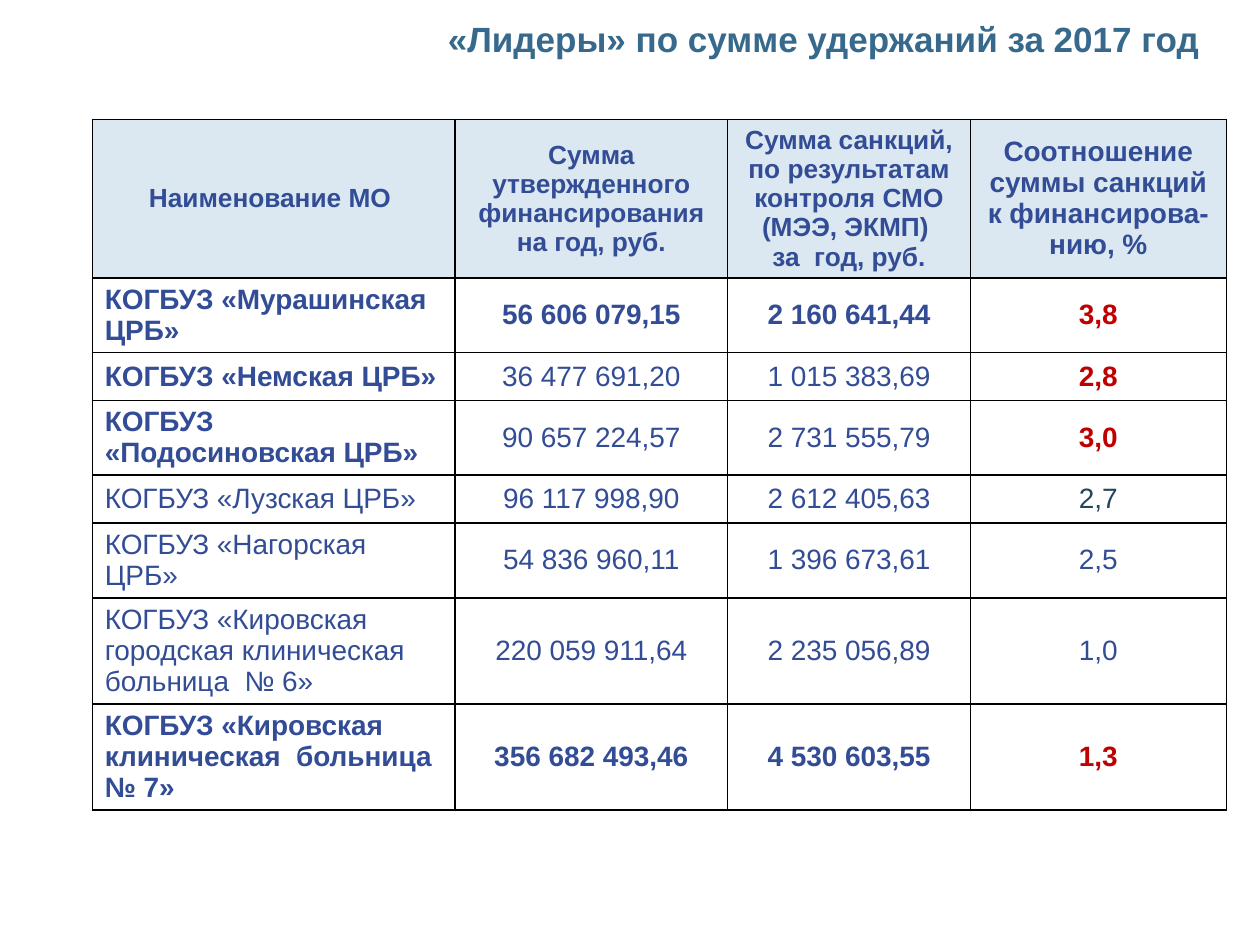
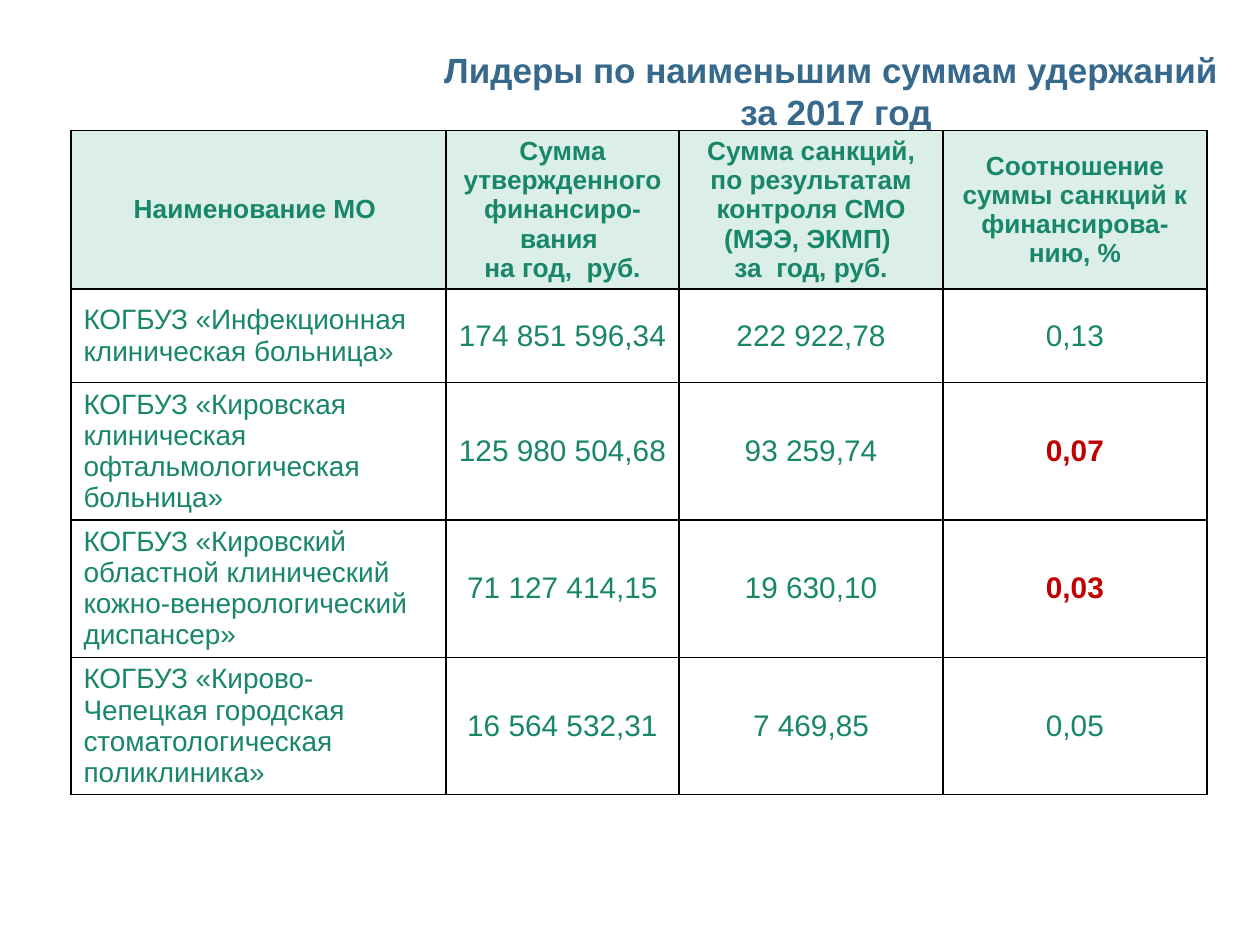
"""Build two slides ranking hospitals by the sums withheld in 2017."""
import pptx
import pptx.dml.color
import pptx.enum.text
import pptx.oxml
import pptx.oxml.ns
import pptx.util

Cm, Pt = pptx.util.Cm, pptx.util.Pt
Align, Anchor = pptx.enum.text.PP_ALIGN, pptx.enum.text.MSO_ANCHOR

FONT = "Arial"
HUES = {
    "title": "36698C", "blue": "324C96", "sky": "DBE8F1", "green": "188669",
    "mint": "DBEFE8", "red": "C00000", "dark": "24465D", "white": "FFFFFF",
    "line": "000000",
}
MARKS = {"n": (False, None), "b": (True, None), "r": (True, "red"), "d": (False, "dark")}

NAME = ["Наименование МО "]
FINES = ["Сумма санкций, по результатам контроля СМО (МЭЭ, ЭКМП) ", "за  год, руб."]
RATIO = ["Соотношение суммы санкций к финансирова-\nнию, %"]

SLIDES = [
    {
        "title": "«Лидеры» по сумме удержаний за 2017 год",
        "box": (8.39, 0.23, 16.43, 1.5), "inset": 0.13,
        "ink": "blue", "band": "sky", "left": 1.86, "top": 2.41,
        "cols": [7.31, 5.5, 4.89, 5.16],
        "tall": [3.19, 1.51, 0.96, 1.51, 0.96, 1.51, 2.14, 2.14],
        "head": [NAME, ["Сумма утвержденного финансирования на год, руб."], FINES, RATIO],
        "hsize": [15, 15, 15, 16], "size": [16, 16, 16, 16],
        "rows": [
            ("bbbr", "КОГБУЗ «Мурашинская ЦРБ»", "56 606 079,15", "2 160 641,44", "3,8"),
            ("bnnr", "КОГБУЗ «Немская ЦРБ»", "36 477 691,20", "1 015 383,69", "2,8"),
            ("bnnr", "КОГБУЗ «Подосиновская ЦРБ»", "90 657 224,57", "2 731 555,79", "3,0"),
            ("nnnd", "КОГБУЗ «Лузская ЦРБ»", "96 117 998,90", "2 612 405,63", "2,7"),
            ("nnnn", "КОГБУЗ «Нагорская ЦРБ»", "54 836 960,11", "1 396 673,61", "2,5"),
            ("nnnn", "КОГБУЗ «Кировская городская клиническая  больница  № 6»",
             "220 059 911,64", "2 235 056,89", "1,0"),
            ("bbbr", "КОГБУЗ «Кировская клиническая  больница  № 7»",
             "356 682 493,46", "4 530 603,55", "1,3"),
        ],
    },
    {
        "title": "Лидеры по наименьшим суммам удержаний \nза 2017 год",
        "box": (8.51, 0, 16.69, 1.5), "inset": 0.97,
        "ink": "green", "band": "mint", "left": 1.43, "top": 2.63,
        "cols": [7.56, 4.7, 5.32, 5.32],
        "tall": [3.2, 1.88, 2.77, 2.77, 2.77],
        "head": [NAME, ["Сумма утвержденного финансиро-\nвания ", "на год,  руб."], FINES, RATIO],
        "hsize": [15, 15, 15, 15], "size": [16, 17, 17, 17],
        "rows": [
            ("nnnn", "КОГБУЗ «Инфекционная клиническая больница»",
             "174 851 596,34", "222 922,78", "0,13"),
            ("nnnr", "КОГБУЗ «Кировская клиническая офтальмологическая  больница»",
             "125 980 504,68", "93 259,74", "0,07"),
            ("nnnr", "КОГБУЗ «Кировский областной клинический кожно-венерологический диспансер»",
             "71 127 414,15", "19 630,10", "0,03"),
            ("nnnn", "КОГБУЗ «Кирово-Чепецкая городская стоматологическая поликлиника»",
             "16 564 532,31", "7 469,85", "0,05"),
        ],
    },
]


def tint(name):
    return pptx.dml.color.RGBColor.from_string(HUES[name])


def write(frame, paras, size, ink, bold, align=Align.CENTER):
    for i, text in enumerate(paras):
        para = frame.add_paragraph() if i else frame.paragraphs[0]
        para.alignment = align
        for j, part in enumerate(text.split("\n")):
            if j:
                para.add_line_break()
            run = para.add_run()
            run.text = part
            run.font.name, run.font.size, run.font.bold = FONT, Pt(size), bold
            run.font.color.rgb = tint(ink)


def frame_cell(cell, fill):
    props = cell._tc.get_or_add_tcPr()
    for side in ("lnL", "lnR", "lnT", "lnB"):
        props.append(pptx.oxml.parse_xml(
            f'<a:{side} {pptx.oxml.ns.nsdecls("a")} w="{Pt(1)}"><a:solidFill>'
            f'<a:srgbClr val="{HUES["line"]}"/></a:solidFill></a:{side}>'))
    cell.fill.solid()
    cell.fill.fore_color.rgb = tint(fill)
    cell.vertical_anchor = Anchor.MIDDLE
    cell.margin_top = cell.margin_bottom = 0


def add_title(slide, data):
    frame = slide.shapes.add_textbox(*map(Cm, data["box"])).text_frame
    frame.word_wrap = True
    frame.vertical_anchor = Anchor.TOP
    frame.margin_left = frame.margin_right = frame.margin_bottom = Cm(0.13)
    frame.margin_top = Cm(data["inset"])
    write(frame, [data["title"]], 20, "title", True)


def add_grid(slide, data):
    cols, tall = data["cols"], data["tall"]
    grid = slide.shapes.add_table(
        len(tall), len(cols), Cm(data["left"]), Cm(data["top"]),
        Cm(sum(cols)), Cm(sum(tall))).table
    grid.first_row = grid.horz_banding = False
    for col, wide in zip(grid.columns, cols):
        col.width = Cm(wide)
    for row, high in zip(grid.rows, tall):
        row.height = Cm(high)
    for c, paras in enumerate(data["head"]):
        cell = grid.cell(0, c)
        frame_cell(cell, data["band"])
        write(cell.text_frame, paras, data["hsize"][c], data["ink"], True)
    for r, (marks, *texts) in enumerate(data["rows"], 1):
        for c, (mark, text) in enumerate(zip(marks, texts)):
            bold, ink = MARKS[mark]
            cell = grid.cell(r, c)
            frame_cell(cell, "white")
            write(cell.text_frame, [text], data["size"][c], ink or data["ink"],
                  bold, Align.CENTER if c else Align.LEFT)


def main():
    deck = pptx.Presentation()
    deck.slide_width, deck.slide_height = Cm(25.4), Cm(19.05)
    for data in SLIDES:
        slide = deck.slides.add_slide(deck.slide_layouts[6])
        add_title(slide, data)
        add_grid(slide, data)
    deck.save("out.pptx")


if __name__ == "__main__":
    main()
